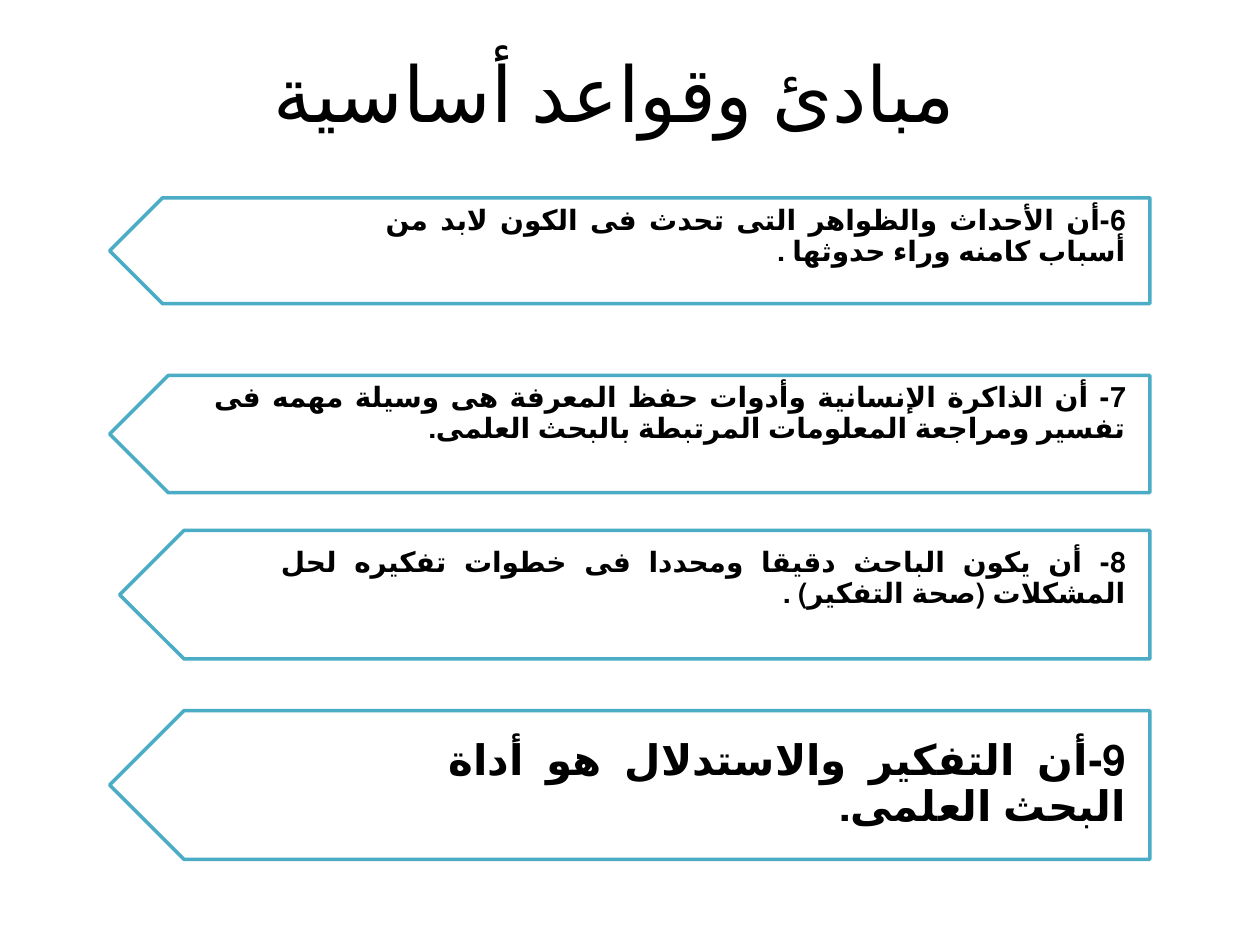
from dataclasses import dataclass

from pptx import Presentation
from pptx.dml.color import RGBColor
from pptx.enum.shapes import MSO_SHAPE
from pptx.enum.text import MSO_ANCHOR, PP_ALIGN
from pptx.slide import Slide
from pptx.util import Inches, Pt

BLACK = RGBColor(0x00, 0x00, 0x00)
WHITE = RGBColor(0xFF, 0xFF, 0xFF)
TEAL = RGBColor(0x4B, 0xAC, 0xC6)

COLUMNS, ROWS = 100, 75
RIGHT_EDGE = 91.25

PRINCIPLES = [
    (8.7, 15.7, 8.4, 16.3, 6.2, 14.3, 16,
     "6-أن الأحداث والظواهر التى تحدث فى الكون لابد من أسباب كامنه وراء حدوثها ."),
    (8.7, 29.8, 9.3, 12.4, 6.1, 4.6, 16,
     "7- أن الذاكرة الإنسانية وأدوات حفظ المعرفة هى وسيلة مهمه فى تفسير "
     "ومراجعة المعلومات المرتبطة بالبحث العلمى."),
    (9.5, 42.1, 10.2, 15.7, 7.7, 6.6, 16,
     "8- أن يكون الباحث دقيقا ومحددا فى خطوات تفكيره لحل المشكلات (صحة التفكير) ."),
    (8.7, 56.4, 11.8, 21.3, 11.8, 14.3, 24,
     "9-أن التفكير والاستدلال هو أداة البحث العلمى."),
]


@dataclass
class PrinciplesSlide:
    """Draws right-to-left text and arrows on a grid of columns and rows."""

    slide: Slide
    width: int
    height: int
    font: str = "Calibri"
    language: str = "ar-EG"
    ink: RGBColor = BLACK
    outline: RGBColor = TEAL

    def across(self, columns):
        return round(self.width * columns / COLUMNS)

    def down(self, rows):
        return round(self.height * rows / ROWS)

    def box(self, left, top, width, height):
        return (self.across(left), self.down(top),
                self.across(width), self.down(height))

    def text(self, shapes, box, wording, size, align, bold=False):
        frame = shapes.add_textbox(*self.box(*box)).text_frame
        frame.word_wrap = True
        frame.vertical_anchor = MSO_ANCHOR.MIDDLE
        paragraph = frame.paragraphs[0]
        paragraph.text = wording
        paragraph.alignment = align
        paragraph.font.name = self.font
        paragraph.font.size = Pt(size)
        paragraph.font.bold = bold
        paragraph.font.color.rgb = self.ink
        paragraph._p.get_or_add_pPr().set("rtl", "1")
        for run in paragraph.runs:
            run._r.get_or_add_rPr().set("lang", self.language)
        return frame

    def title(self, box, wording):
        self.text(self.slide.shapes, box, wording, 44, PP_ALIGN.CENTER)

    def arrow(self, shapes, box):
        arrow = shapes.add_shape(MSO_SHAPE.PENTAGON, *self.box(*box))
        arrow.rotation = 180
        arrow.shadow.inherit = False
        arrow.fill.solid()
        arrow.fill.fore_color.rgb = WHITE
        arrow.line.color.rgb = self.outline
        arrow.line.width = Pt(2)

    def principle(self, left, top, height, text_left, text_height, inset, size, wording):
        shapes = self.slide.shapes.add_group_shape().shapes
        self.arrow(shapes, (left, top, RIGHT_EDGE - left, height))
        frame = self.text(
            shapes, (text_left, top, RIGHT_EDGE - text_left, text_height),
            wording, size, PP_ALIGN.JUSTIFY, bold=True)
        frame.margin_left = self.across(inset)
        frame.margin_right = self.across(1.9)
        frame.margin_top = frame.margin_bottom = self.down(1)
        frame.paragraphs[0].line_spacing = 0.9
        frame.paragraphs[0].space_after = Pt(size * 0.35)


def main():
    presentation = Presentation()
    presentation.slide_width = Inches(10)
    presentation.slide_height = Inches(7.5)
    page = PrinciplesSlide(
        presentation.slides.add_slide(presentation.slide_layouts[6]),
        presentation.slide_width, presentation.slide_height)
    page.title((4.3, 3, 89, 8.5), "مبادئ وقواعد أساسية")
    for principle in PRINCIPLES:
        page.principle(*principle)
    presentation.save("out.pptx")


if __name__ == "__main__":
    main()
